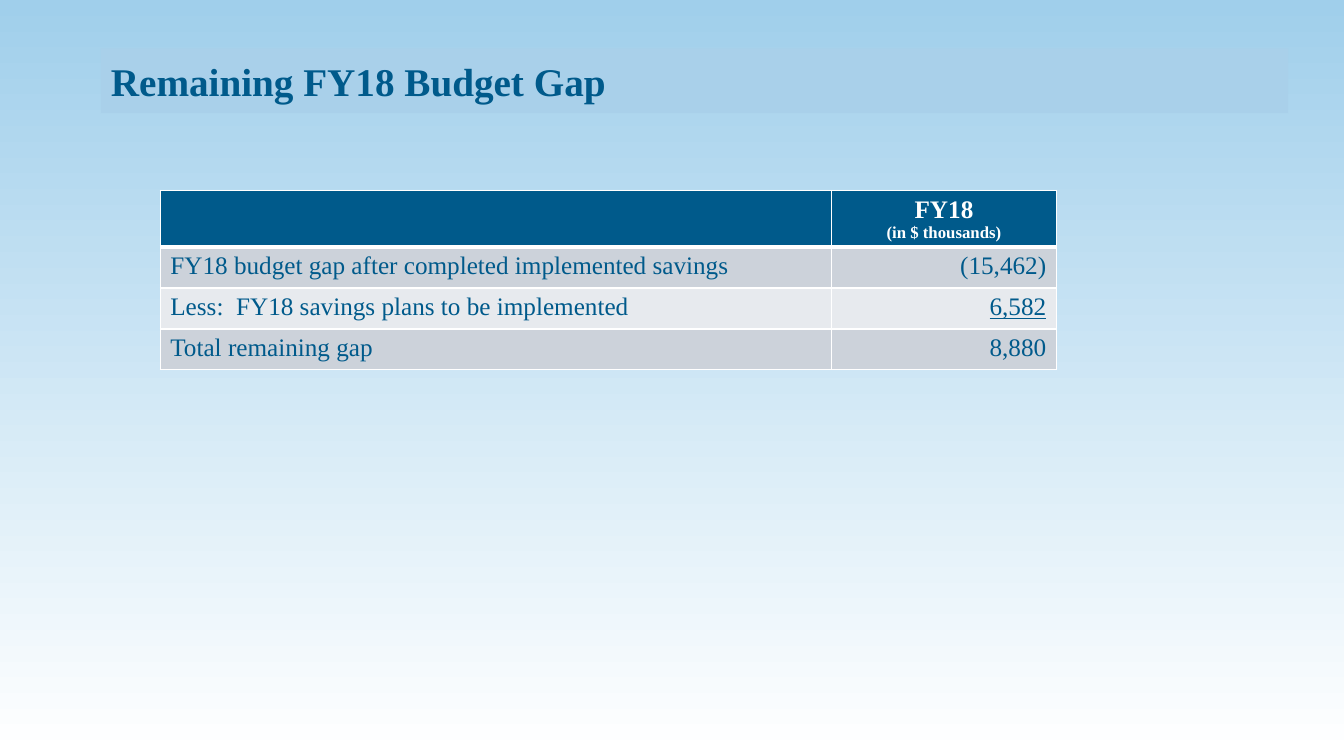
from lxml.etree import SubElement
from pptx import Presentation
from pptx.dml.color import RGBColor
from pptx.enum.text import MSO_ANCHOR as Anchor, PP_ALIGN as Align
from pptx.oxml.ns import qn
from pptx.util import Cm, Pt

NAVY = RGBColor(0x00, 0x5A, 0x8B)
SKY = RGBColor(0xA0, 0xCF, 0xEB)
TITLE_BAND = RGBColor(0xA9, 0xD0, 0xEA)
BAND_DARK = RGBColor(0xCC, 0xD2, 0xDA)
BAND_LIGHT = RGBColor(0xE7, 0xEA, 0xEE)
WHITE = RGBColor(0xFF, 0xFF, 0xFF)
FONT = "Times New Roman"

BUDGET_ROWS = [
    ("FY18 budget gap after completed implemented savings", "(15,462)"),
    ("Less:  FY18 savings plans to be implemented", "6,582"),
    ("Total remaining gap", "8,880"),
]
UNDERLINED_ROW = 2


def write(para, text, size=18, color=NAVY, bold=False, underline=False, align=Align.LEFT):
    para.alignment = align
    span = para.add_run()
    span.text = text
    font = span.font
    font.name, font.size, font.bold, font.underline = FONT, Pt(size), bold, underline
    font.color.rgb = color


class BudgetSlide:
    def __init__(self, deck):
        self.page = deck.slides.add_slide(deck.slide_layouts[5])

    def background(self, top, bottom):
        fill = self.page.background.fill
        fill.gradient()
        fill.gradient_angle = 270
        for stop, color, position in zip(fill.gradient_stops, (top, bottom), (0, 1)):
            stop.color.rgb = color
            stop.position = position

    def title(self, text, left, top, width, height):
        box = self.page.shapes.title
        box.left, box.top, box.width, box.height = Cm(left), Cm(top), Cm(width), Cm(height)
        box.fill.solid()
        box.fill.fore_color.rgb = TITLE_BAND
        box.text_frame.vertical_anchor = Anchor.MIDDLE
        write(box.text_frame.paragraphs[0], text, size=28, bold=True)

    def table(self, left, top, widths, heights):
        frame = self.page.shapes.add_table(
            len(heights), len(widths), Cm(left), Cm(top), Cm(sum(widths)), Cm(sum(heights)))
        table = frame.table
        for column, width in zip(table.columns, widths):
            column.width = Cm(width)
        for row, height in zip(table.rows, heights):
            row.height = Cm(height)
        return table

    def cell(self, cell, fill, top_line=1, bottom_line=1):
        properties = cell._tc.get_or_add_tcPr()
        for side, points in (("L", 1), ("R", 1), ("T", top_line), ("B", bottom_line)):
            line = SubElement(properties, qn(f"a:ln{side}"), w=str(Pt(points)))
            solid = SubElement(line, qn("a:solidFill"))
            SubElement(solid, qn("a:srgbClr"), val=str(WHITE))
        cell.fill.solid()
        cell.fill.fore_color.rgb = fill
        return cell.text_frame.paragraphs[0]


def main():
    deck = Presentation()
    deck.slide_width, deck.slide_height = Cm(33.87), Cm(19.05)
    slide = BudgetSlide(deck)

    # Background and title
    slide.background(SKY, WHITE)
    slide.title("Remaining FY18 Budget Gap", 2.54, 1.22, 29.92, 1.63)

    # Table header
    table = slide.table(4.04, 4.8, (16.92, 5.66), (1.41, 1.03, 1.03, 1.03))
    slide.cell(table.cell(0, 0), NAVY, bottom_line=3)
    year = slide.cell(table.cell(0, 1), NAVY, bottom_line=3)
    write(year, "FY18", color=WHITE, bold=True, align=Align.CENTER)
    unit = table.cell(0, 1).text_frame.add_paragraph()
    write(unit, "(in $ thousands)", size=12, color=WHITE, bold=True, align=Align.CENTER)

    # Budget rows
    for number, (label, amount) in enumerate(BUDGET_ROWS, start=1):
        fill = BAND_DARK if number % 2 else BAND_LIGHT
        top_line = 3 if number == 1 else 1
        write(slide.cell(table.cell(number, 0), fill, top_line), label)
        write(slide.cell(table.cell(number, 1), fill, top_line), amount,
              underline=number == UNDERLINED_ROW, align=Align.RIGHT)

    deck.save("out.pptx")


if __name__ == "__main__":
    main()
